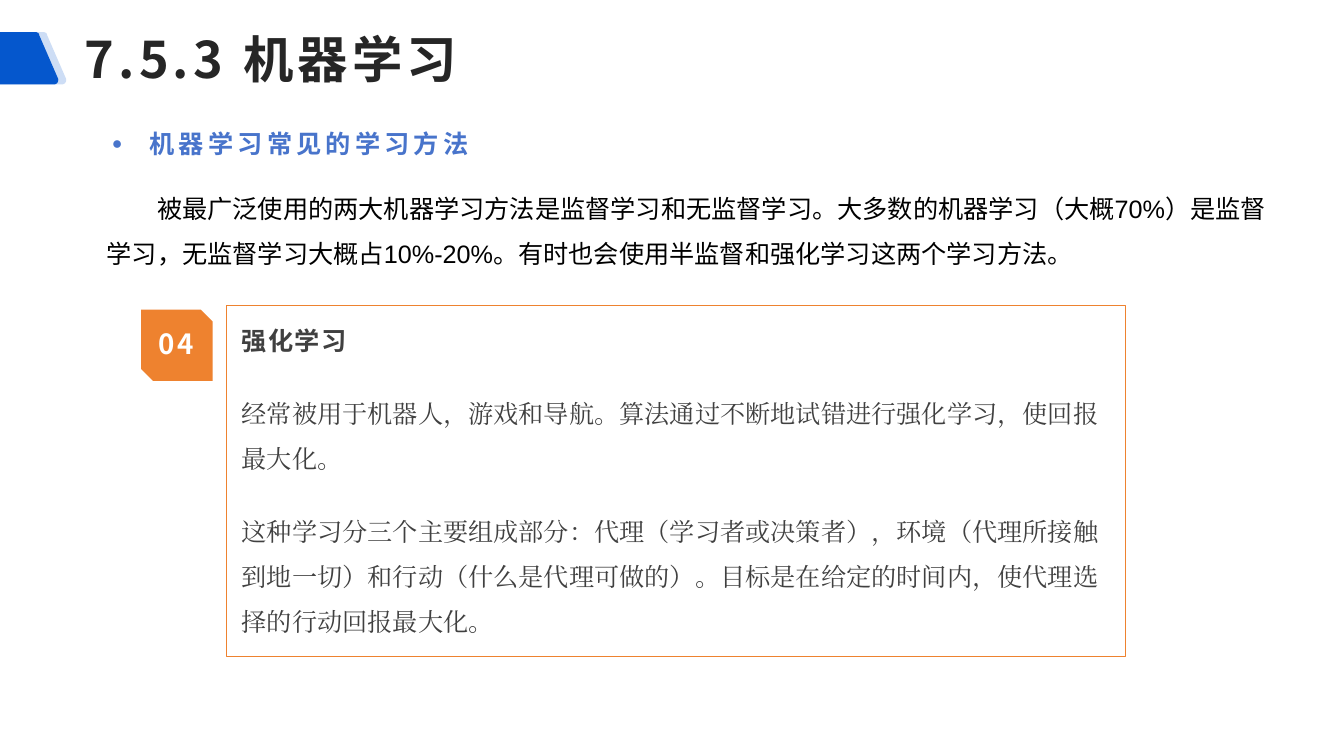
from lxml.etree import SubElement
from pptx import Presentation
from pptx.dml.color import RGBColor
from pptx.enum.shapes import MSO_SHAPE
from pptx.enum.text import MSO_ANCHOR, PP_ALIGN
from pptx.oxml.ns import qn
from pptx.util import Cm, Pt

BLUE = RGBColor(0x05, 0x57, 0xCD)
HEADING_BLUE = RGBColor(0x48, 0x74, 0xCB)
ORANGE = RGBColor(0xEE, 0x82, 0x2F)
DARK = RGBColor(0x26, 0x26, 0x26)
GREY = RGBColor(0x40, 0x40, 0x40)
BLACK = RGBColor(0, 0, 0)
WHITE = RGBColor(0xFF, 0xFF, 0xFF)
SANS = "Noto Sans CJK SC"

TITLE = "7.5.3 机器学习"
HEADING = "机器学习常见的学习方法"
INTRO = ("被最广泛使用的两大机器学习方法是监督学习和无监督学习。大多数的机器学习（大概70%）是监督学习，"
         "无监督学习大概占10%-20%。有时也会使用半监督和强化学习这两个学习方法。")
NUMBER = "04"
METHOD = "强化学习"
METHOD_TEXT = [
    "经常被用于机器人，游戏和导航。算法通过不断地试错进行强化学习，使回报最大化。",
    "这种学习分三个主要组成部分：代理（学习者或决策者），环境（代理所接触到地一切）和行动"
    "（什么是代理可做的）。目标是在给定的时间内，使代理选择的行动回报最大化。",
]

# Right-hand corners of the title tab: Bezier points in cm from its top centre
TAB_CORNERS = [
    [(0.47, 0), (0.52, 0), (0.57, 0.03), (0.57, 0.08)],
    [(1.03, 1.14), (1.08, 1.22), (1.03, 1.32), (0.93, 1.32)],
]
TAB_TOP = 0.81
TABS = [(0.62, 20), (0.42, 100)]  # centre in cm, opacity in percent
CURVE_STEPS = 8
LINE_PITCH = Pt(32.1)


def write(paragraph, text, font=SANS, size=18, color=GREY, bold=False, tracking=0,
          align=PP_ALIGN.LEFT, line_spacing=None, after=0, margin=0, indent=0, bullet=None):
    paragraph.alignment = align
    paragraph.space_before = Pt(0)
    paragraph.space_after = Pt(after)
    if line_spacing:
        paragraph.line_spacing = line_spacing
    properties = paragraph._p.get_or_add_pPr()
    properties.set("marL", str(Cm(margin)))
    properties.set("indent", str(Cm(indent)))
    if bullet:
        bullet_color = SubElement(properties, qn("a:buClr"))
        SubElement(bullet_color, qn("a:srgbClr"), val=str(color))
        SubElement(properties, qn("a:buSzPct"), val="70000")
        SubElement(properties, qn("a:buFont"), typeface="Arial")
        SubElement(properties, qn("a:buChar"), char=bullet)
    run = paragraph.add_run()
    run.text = text
    run.font.name = font
    run.font.size = Pt(size)
    run.font.bold = bold
    run.font.color.rgb = color
    run_properties = run._r.get_or_add_rPr()
    run_properties.set("spc", str(int(tracking * 100)))
    SubElement(run_properties, qn("a:ea"), typeface=font)


def add_text_frame(slide, left, top, width, height):
    box = slide.shapes.add_textbox(Cm(left), Cm(top), Cm(width), Cm(height))
    box.text_frame.word_wrap = True
    return box.text_frame


def bezier(points, t):
    weights = ((1 - t) ** 3, 3 * t * (1 - t) ** 2, 3 * t ** 2 * (1 - t), t ** 3)
    return tuple(sum(w * p[axis] for w, p in zip(weights, points)) for axis in (0, 1))


def add_tab(slide, center, opacity):
    right = [bezier(corner, step / CURVE_STEPS)
             for corner in TAB_CORNERS for step in range(CURVE_STEPS + 1)]
    outline = right + [(-x, y) for x, y in reversed(right)]
    points = [(Cm(center + x), Cm(TAB_TOP + y)) for x, y in outline]
    builder = slide.shapes.build_freeform(*points[0])
    builder.add_line_segments(points[1:], close=True)
    tab = builder.convert_to_shape()
    tab.shadow.inherit = False
    tab.line.fill.background()
    tab.fill.solid()
    tab.fill.fore_color.rgb = BLUE
    if opacity < 100:
        color = tab.fill._xPr.find(qn("a:solidFill"))[0]
        SubElement(color, qn("a:alpha"), val=str(opacity * 1000))


def add_panel(slide, kind, left, top, width, height, fill=None, line=None):
    panel = slide.shapes.add_shape(kind, Cm(left), Cm(top), Cm(width), Cm(height))
    panel.shadow.inherit = False
    if fill:
        panel.fill.solid()
        panel.fill.fore_color.rgb = fill
    else:
        panel.fill.background()
    if line:
        panel.line.color.rgb = line
        panel.line.width = Pt(0.5)
    else:
        panel.line.fill.background()


def main():
    presentation = Presentation()
    presentation.slide_width, presentation.slide_height = Cm(33.87), Cm(19.05)
    slide = presentation.slides.add_slide(presentation.slide_layouts[5])

    for center, opacity in TABS:
        add_tab(slide, center, opacity)

    title = slide.shapes.title
    title.left, title.top, title.width, title.height = Cm(1.88), Cm(0.2), Cm(31.98), Cm(2.54)
    title.text_frame.vertical_anchor = MSO_ANCHOR.MIDDLE
    write(title.text_frame.paragraphs[0], TITLE, size=36, color=DARK, bold=True, tracking=3)

    heading = add_text_frame(slide, 2.57, 3.12, 10.39, 1.02)
    write(heading.paragraphs[0], HEADING, color=HEADING_BLUE, bold=True, tracking=3,
          margin=0.95, indent=-0.95, bullet="●")

    intro = add_text_frame(slide, 2.44, 4.37, 29.77, 2.57)
    write(intro.paragraphs[0], INTRO, font="Arial", color=BLACK,
          line_spacing=LINE_PITCH, indent=1.27)

    add_panel(slide, MSO_SHAPE.RECTANGLE, 5.7, 7.7, 22.66, 8.84, line=ORANGE)
    method = add_text_frame(slide, 5.84, 7.7, 22.5, 8.84)
    write(method.paragraphs[0], METHOD, bold=True, tracking=1,
          line_spacing=LINE_PITCH, after=20)
    for text in METHOD_TEXT:
        write(method.add_paragraph(), text, font="Times New Roman",
              line_spacing=LINE_PITCH, after=20)

    add_panel(slide, MSO_SHAPE.SNIP_2_DIAG_RECTANGLE, 3.56, 7.8, 1.8, 1.8, fill=ORANGE)
    number = add_text_frame(slide, 3.68, 7.95, 1.52, 1.47)
    write(number.paragraphs[0], NUMBER, size=19.8, color=WHITE, bold=True, tracking=1.5,
          align=PP_ALIGN.CENTER, line_spacing=1.2)

    presentation.save("out.pptx")


if __name__ == "__main__":
    main()
